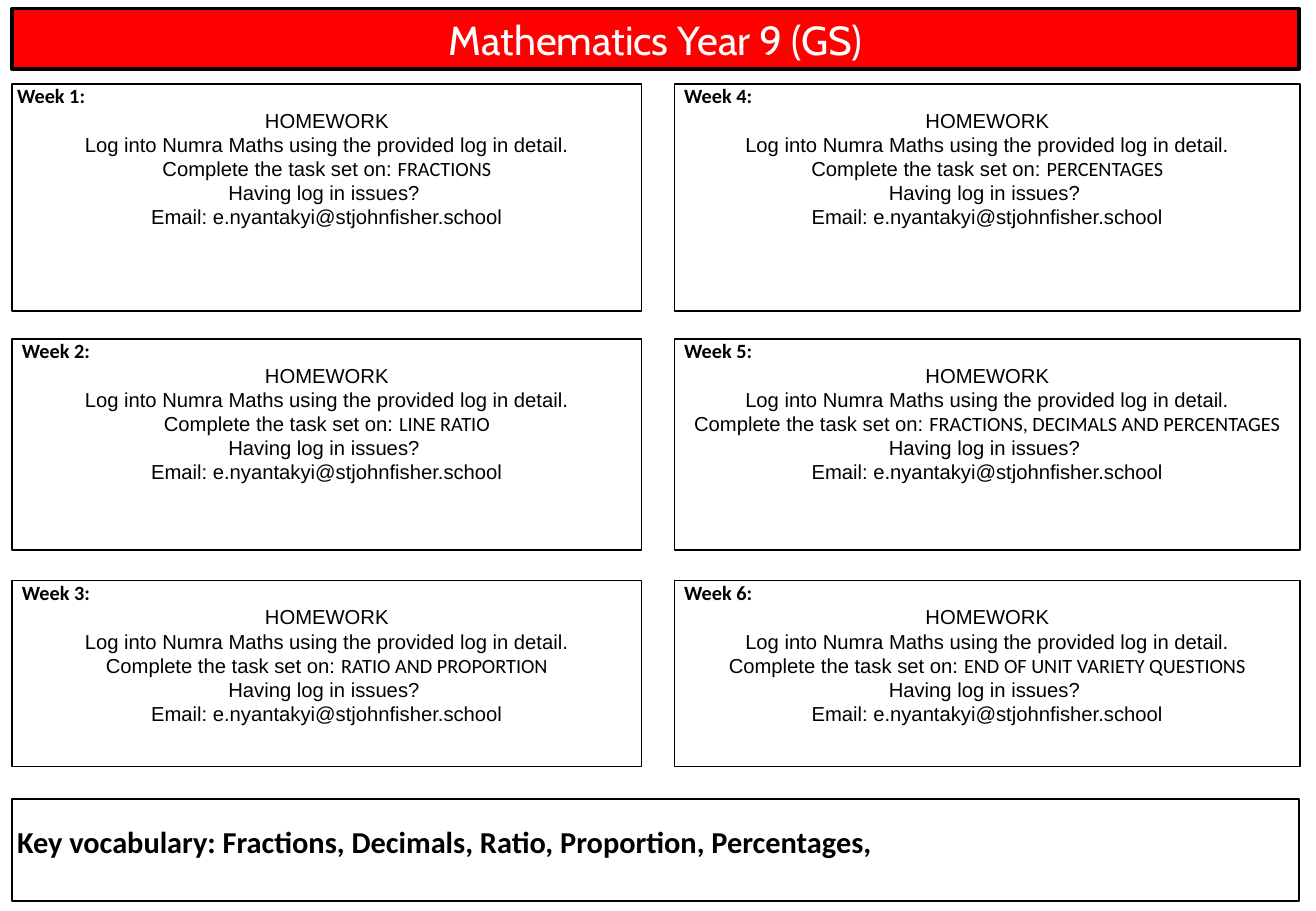
from pptx import Presentation
from pptx.dml.color import RGBColor
from pptx.enum import shapes, text
from pptx.util import Inches, Pt

BLACK = RGBColor(0, 0, 0)
WHITE = RGBColor(255, 255, 255)
RED = RGBColor(255, 0, 0)
LEFT, MID = text.PP_ALIGN.LEFT, text.PP_ALIGN.CENTER


def write(par, words, font="Arial", size=12, bold=False, color=BLACK, align=MID):
    par.alignment = align
    run = par.add_run()
    run.text = words
    run.font.name = font
    run.font.size = Pt(size)
    run.font.bold = bold
    run.font.color.rgb = color


def panel(x, y, w, h):
    box = slide.shapes.add_shape(
        shapes.MSO_SHAPE.RECTANGLE, Inches(x), Inches(y), Inches(w), Inches(h))
    box.shadow.inherit = False
    box.fill.background()
    box.line.color.rgb = BLACK
    box.line.width = Pt(1)
    frame = box.text_frame
    frame.word_wrap = True
    frame.vertical_anchor = text.MSO_ANCHOR.TOP
    frame.margin_left = frame.margin_right = 0
    frame.margin_top = frame.margin_bottom = 0
    return frame


deck = Presentation()
deck.slide_width, deck.slide_height = Inches(10.83), Inches(7.5)
slide = deck.slides.add_slide(deck.slide_layouts[5])

title = slide.shapes.title
title.left, title.top = Inches(0.1), Inches(0.07)
title.width, title.height = Inches(10.59), Inches(0.5)
title.fill.solid()
title.fill.fore_color.rgb = RED
title.line.color.rgb = BLACK
title.line.width = Pt(2.25)
frame = title.text_frame
frame.auto_size = text.MSO_AUTO_SIZE.NONE
frame.vertical_anchor = text.MSO_ANCHOR.MIDDLE
write(frame.paragraphs[0], "Mathematics Year 9 (GS)", font="Cabin", size=24, color=WHITE)

cols = [(0.1, 5.18), (5.55, 5.15)]
rows = [(0.69, 1.87), (2.79, 1.74), (4.78, 1.53)]
tasks = [
    "FRACTIONS", "LINE RATIO", "RATIO AND PROPORTION",
    "PERCENTAGES", "FRACTIONS, DECIMALS AND PERCENTAGES",
    "END OF UNIT VARIETY QUESTIONS",
]
lines = [
    "HOMEWORK",
    "Log into Numra Maths using the provided log in detail.",
    "Complete the task set on: ",
    "Having log in issues? ",
    "Email: e.nyantakyi@stjohnfisher.school",
]

for i, task in enumerate(tasks):
    (x, w), (y, h) = cols[i // 3], rows[i % 3]
    frame = panel(x, y, w, h)
    head = frame.paragraphs[0]
    write(head, f"Week {i + 1}:", font="Calibri", bold=True, align=LEFT)
    inset = Inches(0.04 if i == 0 else 0.08)
    head._p.get_or_add_pPr().set("marL", str(inset))
    for line in lines:
        par = frame.add_paragraph()
        write(par, line)
        if line.startswith("Complete"):
            write(par, task, font="Calibri")
    for par in frame.paragraphs:
        par.line_spacing = Pt(14.35)

frame = panel(0.1, 6.58, 10.59, 0.84)
frame.margin_left, frame.margin_top = Inches(0.04), Inches(0.2)
write(frame.paragraphs[0],
      "Key vocabulary: Fractions, Decimals, Ratio, Proportion, Percentages,",
      font="Calibri", size=18, bold=True, align=LEFT)

deck.save("out.pptx")
